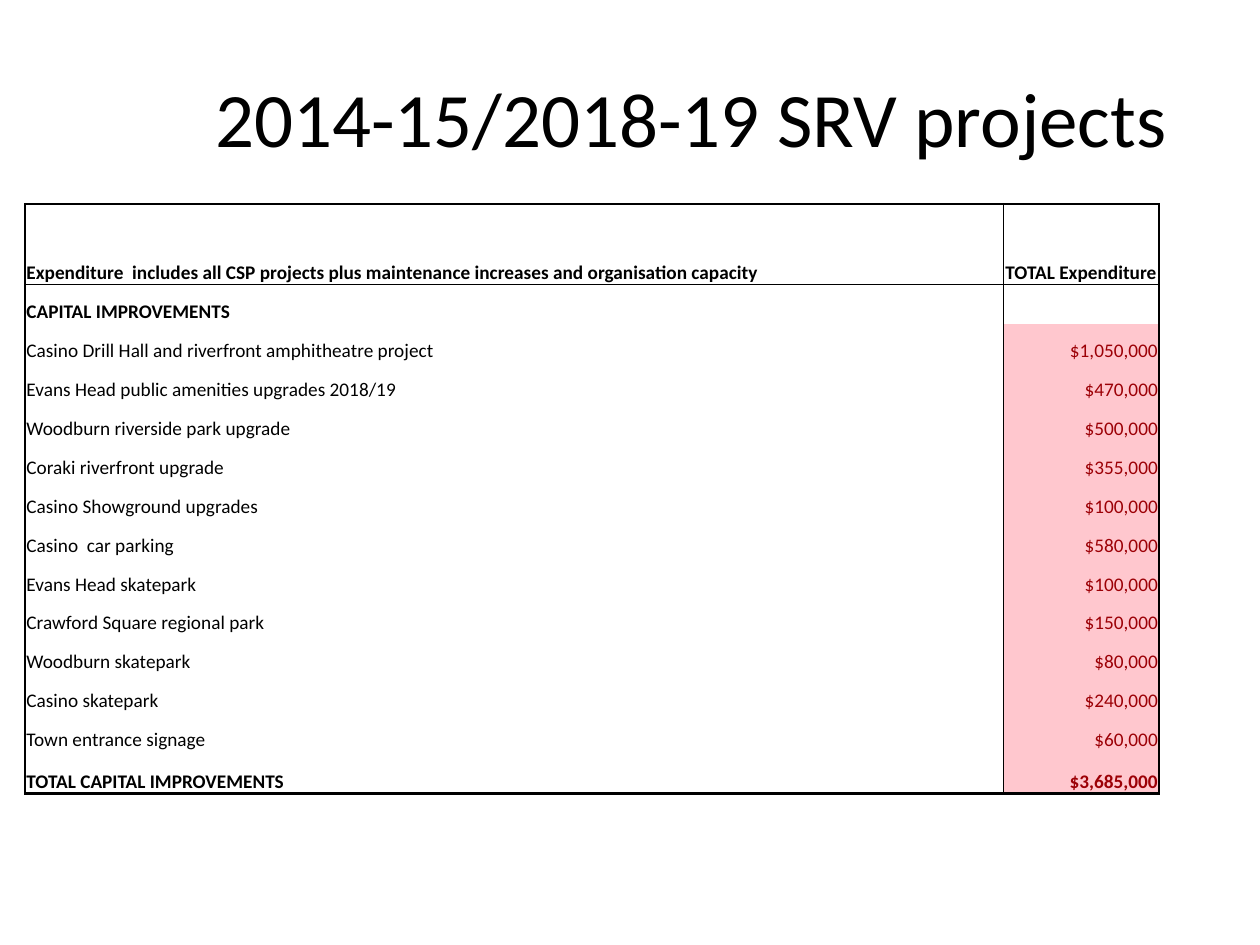
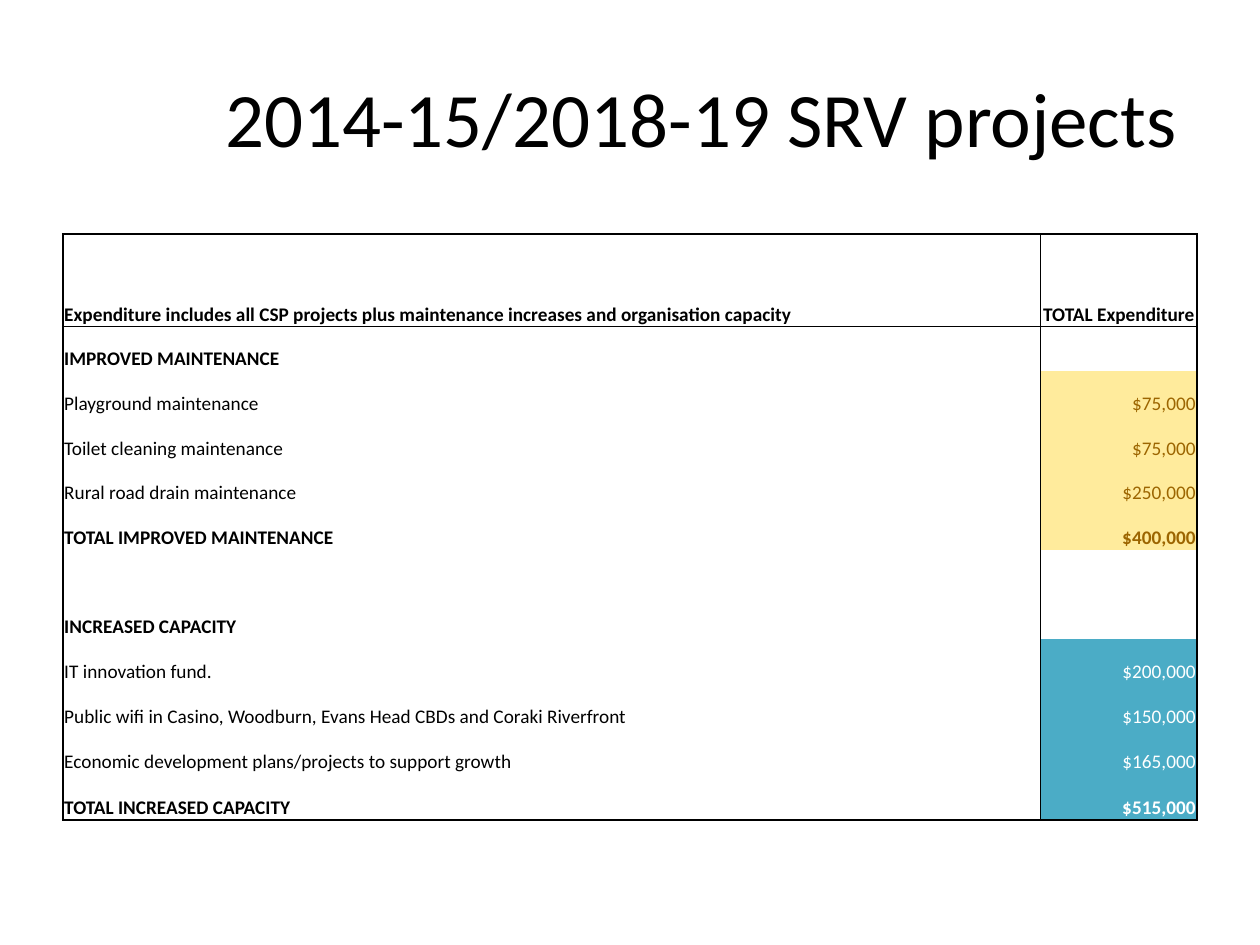
from lxml.etree import SubElement
from pptx import Presentation
from pptx.dml.color import RGBColor
from pptx.enum.text import MSO_ANCHOR as Anchor, PP_ALIGN as Align
from pptx.oxml import parse_xml
from pptx.oxml.ns import nsdecls, qn
from pptx.util import Inches, Pt

TITLE = "2014-15/2018-19 SRV projects"
AMOUNT_HEADING = "TOTAL Expenditure"
FONT = "Calibri"
COLORS = {
    "text": "000000",
    "capital_fill": "FFC7CE", "capital_text": "9C0006",
    "maintenance_fill": "FFEB9C", "maintenance_text": "9C6500",
    "capacity_fill": "4BACC6", "capacity_text": "FFFFFF",
}
COLUMN_WIDTHS = (7.76, 1.24)
THICK, THIN = 1.5, 0.5

SLIDES = [
    {
        "title_left": 1.61, "table_left": 0.2, "table_top": 1.62, "table_height": 4.68,
        "header_height": 0.64, "last_height": 0.33,
        "heading": "Expenditure  includes all CSP projects plus maintenance increases and organisation capacity",
        "sections": [
            ("capital", "CAPITAL IMPROVEMENTS", [
                ("Casino Drill Hall and riverfront amphitheatre project", "$1,050,000"),
                ("Evans Head public amenities upgrades 2018/19", "$470,000"),
                ("Woodburn riverside park upgrade", "$500,000"),
                ("Coraki riverfront upgrade", "$355,000"),
                ("Casino Showground upgrades", "$100,000"),
                ("Casino  car parking", "$580,000"),
                ("Evans Head skatepark", "$100,000"),
                ("Crawford Square regional park", "$150,000"),
                ("Woodburn skatepark", "$80,000"),
                ("Casino skatepark", "$240,000"),
                ("Town entrance signage", "$60,000"),
            ], "$3,685,000"),
        ],
    },
    {
        "title_left": 1.69, "table_left": 0.5, "table_top": 1.86, "table_height": 4.65,
        "header_height": 0.73, "last_height": 0.37,
        "heading": "Expenditure includes all CSP projects plus maintenance increases and organisation capacity",
        "sections": [
            ("maintenance", "IMPROVED MAINTENANCE", [
                ("Playground maintenance", "$75,000"),
                ("Toilet cleaning maintenance", "$75,000"),
                ("Rural road drain maintenance", "$250,000"),
            ], "$400,000"),
            ("capacity", "INCREASED CAPACITY", [
                ("IT innovation fund.", "$200,000"),
                ("Public wifi in Casino, Woodburn, Evans Head CBDs and Coraki Riverfront", "$150,000"),
                ("Economic development plans/projects to support growth", "$165,000"),
            ], "$515,000"),
        ],
    },
]


def format_runs(paragraph, size, color, bold=False):
    for run in paragraph.runs:
        run.font.name = FONT
        run.font.size = Pt(size)
        run.font.bold = bold
        run.font.color.rgb = RGBColor.from_string(color)


def add_title(slide, left):
    box = slide.shapes.add_textbox(Inches(left), Inches(0.3), Inches(9.5 - left), Inches(1.25))
    text_frame = box.text_frame
    text_frame.word_wrap = True
    text_frame.vertical_anchor = Anchor.MIDDLE
    text_frame.text = TITLE
    format_runs(text_frame.paragraphs[0], 44, COLORS["text"])


def table_rows(content):
    rows = [(content["heading"], AMOUNT_HEADING, True, None)]
    for number, (palette, name, projects, total) in enumerate(content["sections"]):
        if number:
            rows.append(("", "", False, None))
        rows.append((name, "", True, None))
        rows += [(label, amount, False, palette) for label, amount in projects]
        rows.append((f"TOTAL {name}", total, True, palette))
    return rows


def set_borders(cell, widths):
    properties = cell._tc.get_or_add_tcPr()
    for position, (side, width) in enumerate(zip("LRTB", widths)):
        paint = f'<a:solidFill><a:srgbClr val="{COLORS["text"]}"/></a:solidFill>' if width else "<a:noFill/>"
        line = parse_xml(f'<a:ln{side} {nsdecls("a")} w="{Pt(width)}">{paint}</a:ln{side}>')
        properties.insert(position, line)


def fill_cell(cell, text, bold, align, color, fill):
    cell.margin_left = cell.margin_right = cell.margin_top = Inches(0.01)
    cell.margin_bottom = 0
    cell.vertical_anchor = Anchor.BOTTOM
    if fill:
        cell.fill.solid()
        cell.fill.fore_color.rgb = RGBColor.from_string(fill)
    else:
        cell.fill.background()
    cell.text_frame.text = text
    paragraph = cell.text_frame.paragraphs[0]
    paragraph.alignment = align
    format_runs(paragraph, 11, color, bold)
    if not text:
        SubElement(paragraph._p, qn("a:endParaRPr"), sz="1100")


def add_expenditure_table(slide, content):
    rows = table_rows(content)
    last = len(rows) - 1
    header_height, last_height = content["header_height"], content["last_height"]
    body_height = (content["table_height"] - header_height - last_height) / (last - 1)
    table = slide.shapes.add_table(
        len(rows), 2, Inches(content["table_left"]), Inches(content["table_top"]),
        Inches(sum(COLUMN_WIDTHS)), Inches(content["table_height"])).table
    table.first_row = table.horz_banding = False
    for column, width in zip(table.columns, COLUMN_WIDTHS):
        column.width = Inches(width)
    for index, (label, amount, bold, palette) in enumerate(rows):
        height = {0: header_height, last: last_height}.get(index, body_height)
        table.rows[index].height = Inches(height)
        label_cell, amount_cell = table.cell(index, 0), table.cell(index, 1)
        color = COLORS[f"{palette}_text"] if palette else COLORS["text"]
        fill = COLORS[f"{palette}_fill"] if palette else None
        align = Align.RIGHT if index else Align.CENTER
        fill_cell(label_cell, label, bold, Align.LEFT, COLORS["text"], None)
        fill_cell(amount_cell, amount, bold, align, color, fill)
        top = {0: THICK, 1: THIN}.get(index, 0)
        bottom = {0: THIN, last: THICK}.get(index, 0)
        set_borders(label_cell, (THICK, THIN, top, bottom))
        set_borders(amount_cell, (THIN, THICK, top, bottom))


def main():
    presentation = Presentation()
    presentation.slide_width = Inches(10)
    presentation.slide_height = Inches(7.5)
    for content in SLIDES:
        slide = presentation.slides.add_slide(presentation.slide_layouts[6])
        add_title(slide, content["title_left"])
        add_expenditure_table(slide, content)
    presentation.save("out.pptx")


if __name__ == "__main__":
    main()
